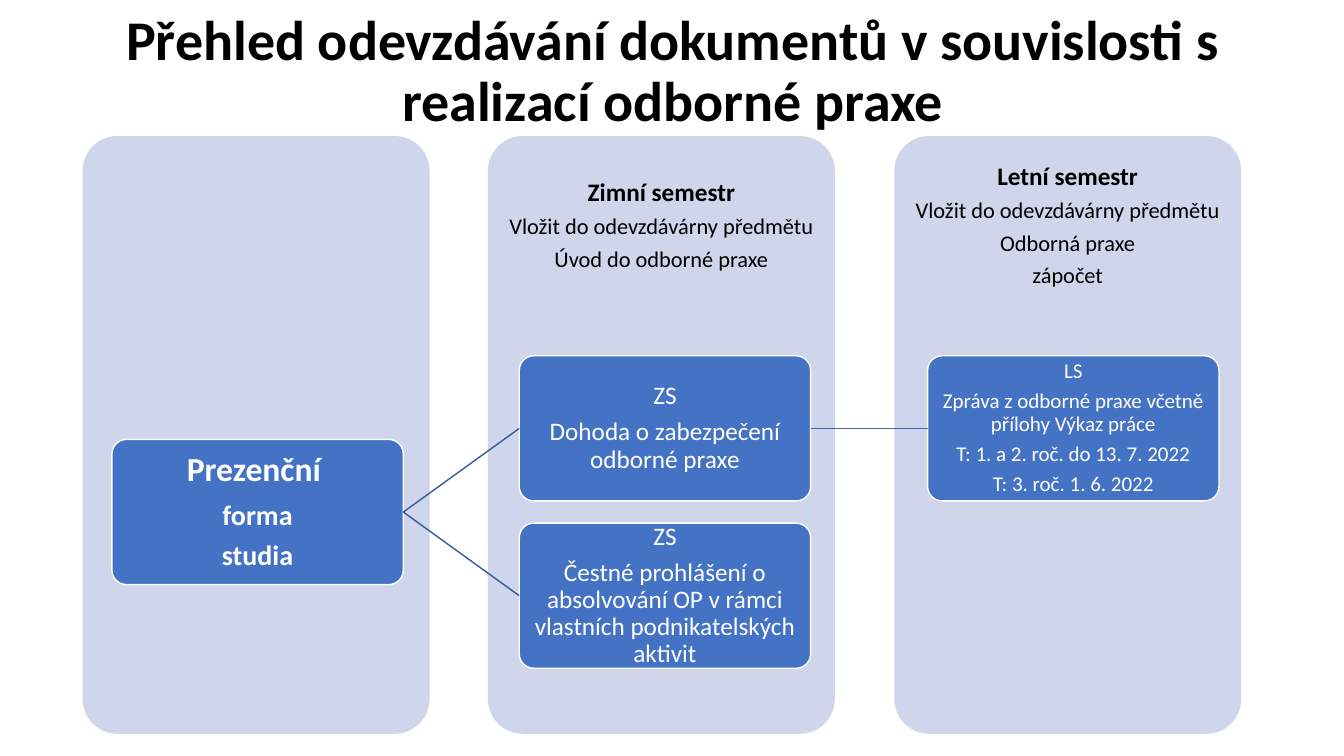
from dataclasses import dataclass

from lxml import etree
from pptx import Presentation
from pptx.dml.color import RGBColor
from pptx.enum import shapes, text
from pptx.oxml.ns import qn
from pptx.util import Emu, Pt

PX = 9144  # EMU per px, 100 px to the inch
FONT = "Calibri"
BLACK, WHITE, PANEL_BLUE, CARD_BLUE = "000000", "FFFFFF", "CFD5EA", "4472C4"

PANEL_LEFT, PANEL_STEP = 82, 402.5
PANEL_TOP, PANEL_WIDTH, PANEL_HEIGHT = 135, 344, 593
CARD_WIDTH, CARD_HEIGHT = 289, 144
RIGHT_SITE, LEFT_SITE = 3, 1


@dataclass(frozen=True)
class Line:
    words: str
    size: int
    bold: bool = False


@dataclass(frozen=True)
class Box:
    left: int
    top: int
    width: int
    height: int
    fill: str
    ink: str
    lines: tuple[Line, ...]
    margins: tuple[int, int, int, int]  # left, top, right, bottom
    border: str | None = None


def px(length: float) -> Emu:
    return Emu(round(length * PX))


def colour(code: str) -> RGBColor:
    return RGBColor.from_string(code)


def apply(target, values: dict) -> None:
    for name, value in values.items():
        setattr(target, name, value)


def write_lines(frame, lines: tuple[Line, ...], ink: str, gap: float) -> None:
    apply(frame, {"word_wrap": True, "auto_size": text.MSO_AUTO_SIZE.NONE,
                  "vertical_anchor": text.MSO_ANCHOR.MIDDLE})
    for index, line in enumerate(lines):
        paragraph = frame.add_paragraph() if index else frame.paragraphs[0]
        apply(paragraph, {"alignment": text.PP_ALIGN.CENTER, "line_spacing": 0.9,
                          "space_before": Pt(0), "space_after": Pt(line.size * gap)})
        run = paragraph.add_run()
        run.text = line.words
        apply(run.font, {"name": FONT, "size": Pt(line.size), "bold": line.bold})
        run.font.color.rgb = colour(ink)


def draw_box(slide, box: Box):
    shape = slide.shapes.add_shape(
        shapes.MSO_SHAPE.ROUNDED_RECTANGLE,
        *map(px, (box.left, box.top, box.width, box.height)))
    shape.adjustments[0] = 0.1
    shape.shadow.inherit = False
    shape.fill.solid()
    shape.fill.fore_color.rgb = colour(box.fill)
    if box.border:
        shape.line.color.rgb = colour(box.border)
        shape.line.width = Pt(1)
    else:
        shape.line.fill.background()
    sides = ("margin_left", "margin_top", "margin_right", "margin_bottom")
    apply(shape.text_frame, dict(zip(sides, map(px, box.margins))))
    write_lines(shape.text_frame, box.lines, box.ink, 0.35)
    return shape


def panel(column: int, *lines: Line) -> Box:
    """Column background with its heading in the top 30 percent."""
    return Box(round(PANEL_LEFT + column * PANEL_STEP), PANEL_TOP, PANEL_WIDTH,
               PANEL_HEIGHT, PANEL_BLUE, BLACK, lines, (4, 4, 4, 419))


def card(left: int, top: int, *lines: Line) -> Box:
    return Box(left, top, CARD_WIDTH, CARD_HEIGHT, CARD_BLUE, WHITE, lines,
               (1, 1, 1, 1), WHITE)


def join(slide, start, end, ink: str) -> None:
    link = slide.shapes.add_connector(shapes.MSO_CONNECTOR.STRAIGHT, 0, 0, 0, 0)
    link.begin_connect(start, RIGHT_SITE)
    link.end_connect(end, LEFT_SITE)
    link.line.color.rgb = colour(ink)
    link.line.width = Pt(1)
    etree.SubElement(link._element.spPr, qn("a:effectLst"))


PANELS = (
    panel(0),
    panel(1, Line("Zimní semestr", 18, True),
          Line("Vložit do odevzdávárny předmětu", 16),
          Line("Úvod do odborné praxe", 16)),
    panel(2, Line("Letní semestr", 18, True),
          Line("Vložit do odevzdávárny předmětu", 16),
          Line("Odborná praxe", 16), Line("zápočet", 16)),
)

CARDS = {
    "study_form": card(111, 436, Line("Prezenční ", 24, True),
                       Line("forma", 20, True), Line("studia", 20, True)),
    "agreement": card(515, 353, Line("ZS", 18),
                      Line("Dohoda o zabezpečení odborné praxe", 18)),
    "declaration": card(515, 519, Line("ZS", 18),
                        Line("Čestné prohlášení o absolvování OP v rámci "
                             "vlastních podnikatelských aktivit", 18)),
    "report": card(920, 353, Line("LS", 15),
                   Line("Zpráva z odborné praxe včetně přílohy Výkaz práce", 15),
                   Line("T: 1. a 2. roč. do 13. 7. 2022", 15),
                   Line("T: 3. roč. 1. 6. 2022", 15)),
}

LINKS = (
    ("study_form", "agreement", "365B9D"),
    ("study_form", "declaration", "365B9D"),
    ("agreement", "report", "3E67B2"),
)


def main() -> None:
    deck = Presentation()
    apply(deck, {"slide_width": px(1333), "slide_height": px(750)})
    slide = deck.slides.add_slide(deck.slide_layouts[5])

    # Title
    title = slide.shapes.title
    apply(title, {"left": px(92), "top": px(0), "width": px(1150), "height": px(145)})
    heading = Line("Přehled odevzdávání dokumentů v souvislosti s "
                   "realizací odborné praxe", 40, True)
    write_lines(title.text_frame, (heading,), BLACK, 0)

    # Semester columns
    for column in PANELS:
        draw_box(slide, column)

    # Documents and the lines between them
    drawn = {name: draw_box(slide, box) for name, box in CARDS.items()}
    for start, end, ink in LINKS:
        join(slide, drawn[start], drawn[end], ink)

    deck.save("out.pptx")


if __name__ == "__main__":
    main()
